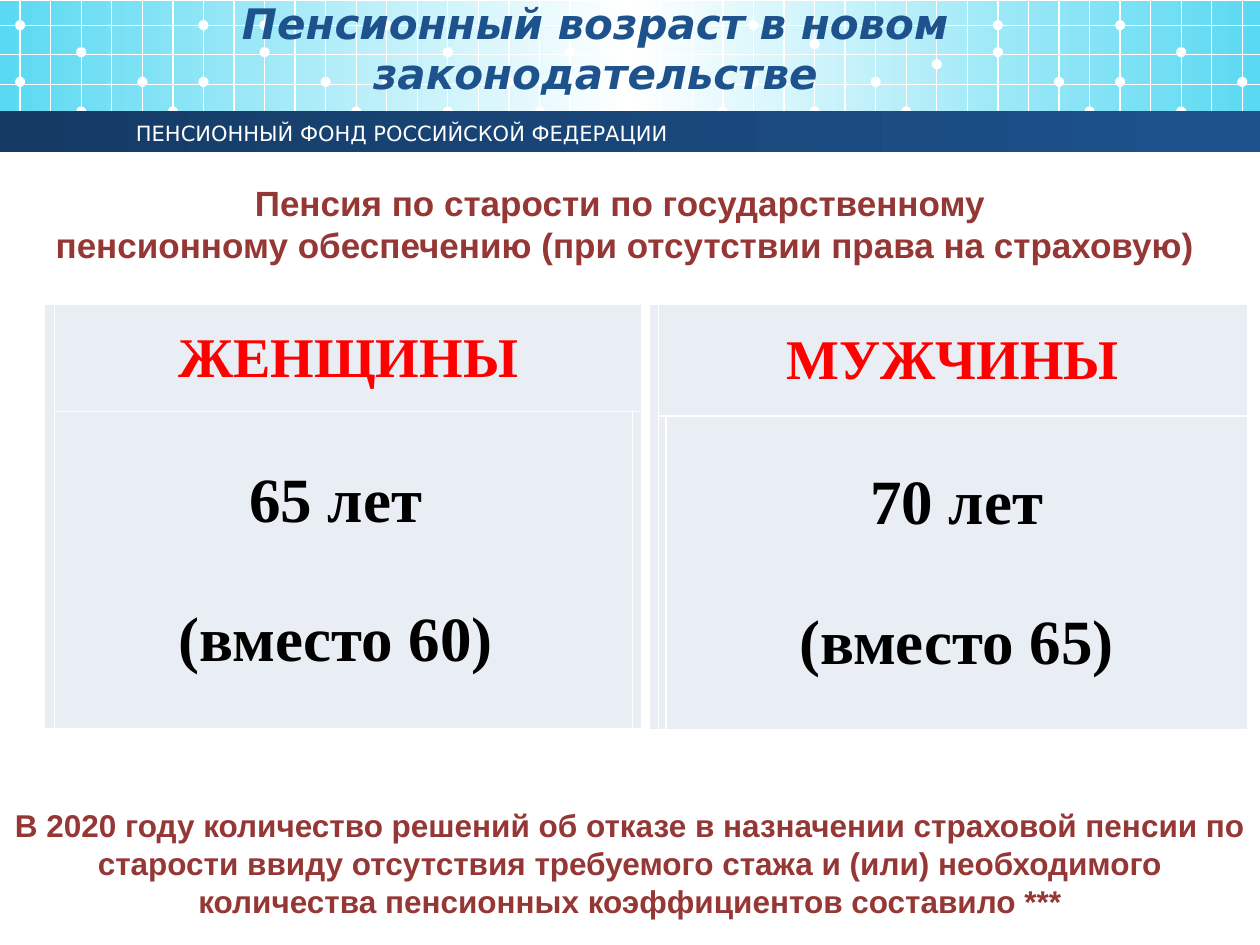
from dataclasses import dataclass

from lxml import etree
from pptx import Presentation
from pptx import util as u
from pptx.dml.color import RGBColor
from pptx.enum import shapes, text
from pptx.oxml import ns

Pt = u.Pt


@dataclass(frozen=True)
class Theme:
    white: str = "FFFFFF"
    cyan: str = "5AD9F2"
    navy: str = "153B65"
    blue: str = "1D528D"
    maroon: str = "953735"
    red: str = "FF0000"
    black: str = "000000"
    cell: str = "E9EDF4"
    sans: str = "Arial"
    display: str = "DejaVu Sans"
    serif: str = "Times New Roman"
    title: int = 24
    fund: int = 12
    subtitle: int = 20
    note: int = 18
    group: int = 32
    age: int = 36


def sub(parent, tag, **attributes):
    return etree.SubElement(parent, ns.qn(tag), **attributes)


class SlideBuilder:
    def __init__(self, slide, theme):
        self.slide = slide
        self.theme = theme

    def shape(self, kind, left, top, width, height):
        item = self.slide.shapes.add_shape(
            kind, Pt(left), Pt(top), Pt(width), Pt(height))
        item.shadow.inherit = False
        item.line.fill.background()
        return item

    def gradient_band(self, top, height, *colors):
        band = self.shape(shapes.MSO_SHAPE.RECTANGLE, 0, top, 720, height)
        band.fill.gradient()
        band.fill.gradient_angle = 0
        stops = band._element.spPr.find(".//" + ns.qn("a:gsLst"))
        for stop in list(stops):
            stops.remove(stop)
        for i, color in enumerate(colors):
            stop = sub(stops, "a:gs", pos=str(100000 * i // (len(colors) - 1)))
            sub(stop, "a:srgbClr", val=color)

    def dot(self, x, y, size=5.8):
        dot = self.shape(shapes.MSO_SHAPE.OVAL, x - size / 2, y - size / 2, size, size)
        dot.fill.solid()
        dot.fill.fore_color.rgb = RGBColor.from_string(self.theme.white)

    def line(self, x1, y1, x2, y2):
        line = self.slide.shapes.add_connector(
            shapes.MSO_CONNECTOR.STRAIGHT, Pt(x1), Pt(y1), Pt(x2), Pt(y2))
        line.line.color.rgb = RGBColor.from_string(self.theme.white)
        line.line.width = Pt(0.75)
        sub(line._element.spPr, "a:effectLst")

    def fill_text(self, frame, words, font, size, color, bold=True, italic=False,
                  align=text.PP_ALIGN.CENTER, gap=0):
        frame.text = words
        for i, paragraph in enumerate(frame.paragraphs):
            paragraph.alignment = align
            if i and gap:
                paragraph.space_before = Pt(gap)
            for run in paragraph.runs:
                run.font.name = font
                run.font.size = Pt(size)
                run.font.bold = bold
                run.font.italic = italic
                run.font.color.rgb = RGBColor.from_string(color)

    def text(self, left, top, width, height, words, font, size, color,
             anchor=text.MSO_ANCHOR.TOP, **style):
        box = self.slide.shapes.add_textbox(Pt(left), Pt(top), Pt(width), Pt(height))
        box.text_frame.word_wrap = True
        box.text_frame.vertical_anchor = anchor
        self.fill_text(box.text_frame, words, font, size, color, **style)

    def style_cell(self, cell):
        cell.margin_left = cell.margin_right = cell.margin_top = Pt(0.7)
        cell.margin_bottom = 0
        cell.vertical_anchor = text.MSO_ANCHOR.MIDDLE
        properties = cell._tc.get_or_add_tcPr()
        for side in ("a:lnL", "a:lnR", "a:lnT", "a:lnB"):
            border = sub(properties, side, w=str(int(Pt(1))))
            sub(sub(border, "a:solidFill"), "a:srgbClr", val=self.theme.white)
        cell.fill.solid()
        cell.fill.fore_color.rgb = RGBColor.from_string(self.theme.cell)

    def age_table(self, left, top, columns, rows, group, ages, age_column):
        t = self.theme
        table = self.slide.shapes.add_table(
            len(rows), len(columns), Pt(left), Pt(top),
            Pt(sum(columns)), Pt(sum(rows))).table
        table.first_row = table.horz_banding = False
        for column, width in zip(table.columns, columns):
            column.width = Pt(width)
        for row, height in zip(table.rows, rows):
            row.height = Pt(height)
        for cell in table.iter_cells():
            self.style_cell(cell)
        table.cell(0, 0).merge(table.cell(1, 0))
        table.cell(0, 1).merge(table.cell(0, 2))
        self.fill_text(table.cell(0, 1).text_frame, group, t.serif, t.group, t.red)
        self.fill_text(table.cell(1, age_column).text_frame, ages, t.serif, t.age,
                       t.black, gap=40)


def main():
    deck = Presentation()
    deck.slide_width, deck.slide_height = Pt(720), Pt(540)
    theme = Theme()
    page = SlideBuilder(deck.slides.add_slide(deck.slide_layouts[6]), theme)

    # Header band with its grid; dots sit on numbered grid columns
    page.gradient_band(0.7, 73.5, theme.cyan, theme.white, theme.cyan)
    grid_x = [11.5 + 17.46 * i for i in range(41)]
    for x in grid_x:
        page.line(x, 0, x, 79.2)
    for y in (14.4, 31, 48.2, 64.1):
        page.line(0, y, 720, y)
    dot_columns = {
        14.4: (0, 6, 8, 12, 18, 20, 24, 30, 32, 36),
        25.2: (26,),
        29.8: (2, 8, 14, 18, 20, 32, 38),
        36.7: (30,),
        46.8: (0, 4, 6, 10, 12, 16, 22, 24, 28, 34, 36, 40),
        63.7: (2, 5, 11, 14, 17, 23, 26, 29, 35, 38),
    }
    for y, columns in dot_columns.items():
        for column in columns:
            page.dot(grid_x[column], y)
    page.gradient_band(63.2, 23.8, theme.navy, theme.blue)

    # Title and fund name
    page.text(54, 0, 572.4, 54.7, "Пенсионный возраст в новом законодательстве",
              theme.display, theme.title, theme.blue,
              anchor=text.MSO_ANCHOR.MIDDLE, italic=True)
    page.text(70.6, 65.5, 516, 21.6, "ПЕНСИОННЫЙ ФОНД РОССИЙСКОЙ ФЕДЕРАЦИИ",
              theme.display, theme.fund, theme.white, bold=False,
              align=text.PP_ALIGN.JUSTIFY)

    # Subtitle
    page.text(-2.9, 100, 720, 55.4,
              "Пенсия по старости по государственному \n"
              "пенсионному обеспечению (при отсутствии права на страховую)",
              theme.sans, theme.subtitle, theme.maroon)

    # Retirement ages for women and men
    page.age_table(25.4, 173.9, (5.8, 330.2, 5.6), (61.3, 181.1),
                   "ЖЕНЩИНЫ", "65 лет \n(вместо 60) ", age_column=1)
    page.age_table(370.8, 173.9, (5.5, 4, 332.3), (63.8, 179.5),
                   "МУЖЧИНЫ", "70 лет\n(вместо 65)", age_column=2)

    # Note on refusals
    page.text(0, 457.2, 720, 72.7,
              "В 2020 году количество решений об отказе в назначении страховой "
              "пенсии по старости ввиду отсутствия требуемого стажа и (или) "
              "необходимого количества пенсионных коэффициентов составило ***",
              theme.sans, theme.note, theme.maroon)

    deck.save("out.pptx")


if __name__ == "__main__":
    main()
